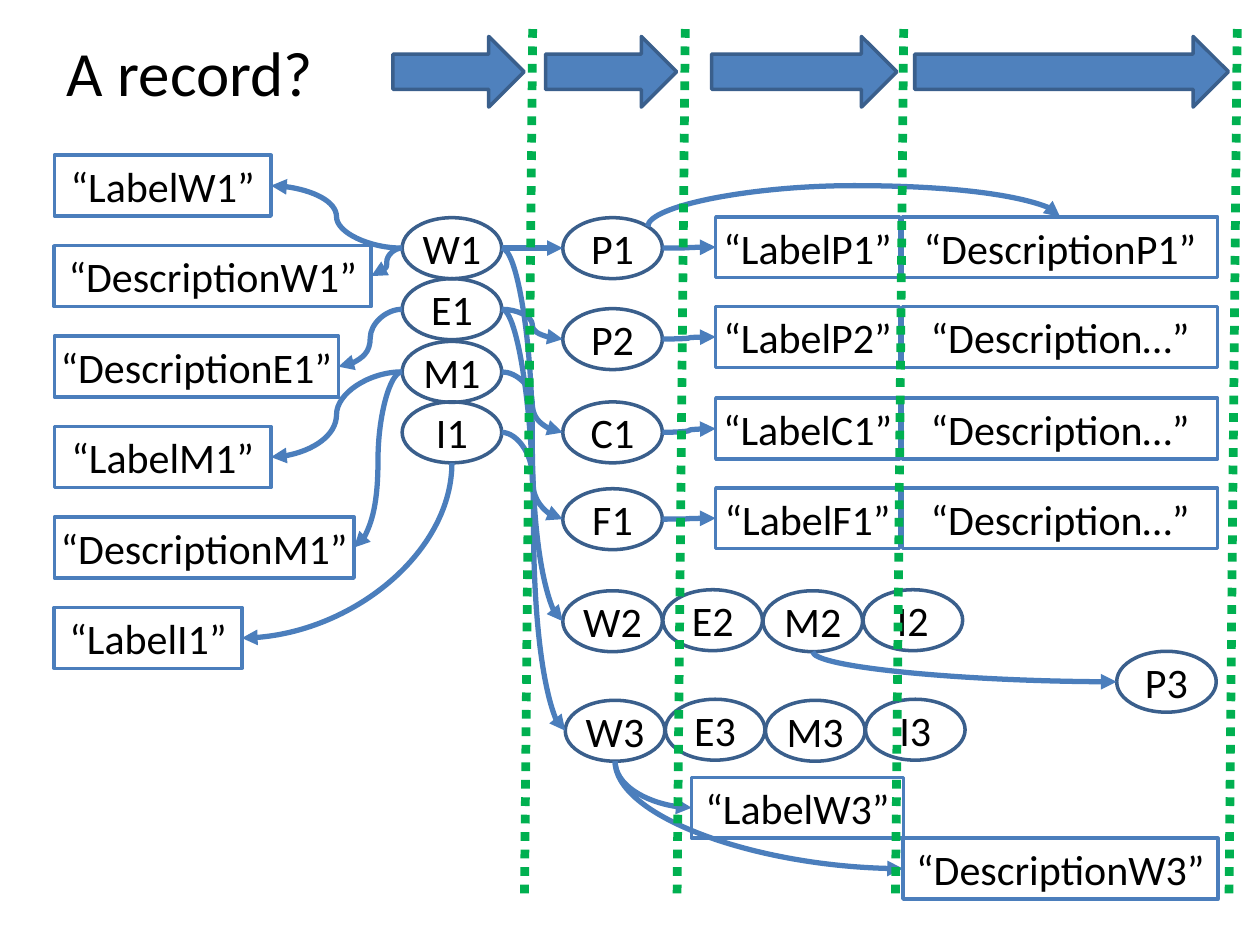
from typing import NamedTuple

from lxml import etree
from pptx import Presentation
from pptx.dml.color import RGBColor
from pptx.enum.dml import MSO_LINE
from pptx.enum.shapes import MSO_CONNECTOR, MSO_SHAPE
from pptx.enum.text import MSO_AUTO_SIZE, PP_ALIGN
from pptx.oxml.ns import qn
from pptx.util import Pt

OVAL, RECTANGLE, ARROW = MSO_SHAPE.OVAL, MSO_SHAPE.RECTANGLE, MSO_SHAPE.RIGHT_ARROW
STRAIGHT, CURVE = MSO_CONNECTOR.STRAIGHT, MSO_CONNECTOR.CURVE
FIT_SHAPE = MSO_AUTO_SIZE.SHAPE_TO_FIT_TEXT
DOTTED = MSO_LINE.ROUND_DOT
LEFT, CENTER = PP_ALIGN.LEFT, PP_ALIGN.CENTER

COLORS = {"text": "000000", "outline": "3A5F8C", "link": "4B7EBC",
          "arrow": "4F81BD", "divider": "00B050"}
FONT = "Calibri"
NODE_WIDTH, NODE_TEXT_WIDTH, HEIGHT = 56.9, 74.2, 34.8
CHAIN_PITCH = 57.2
INSET = 2.88

# Connection sites: (index, horizontal share, vertical share)
OVAL_SITES = {"left": (2, 0, 0.5), "bottom": (4, 0.5, 1),
              "right": (6, 1, 0.5), "top right": (7, 0.854, 0.146)}
BOX_SITES = {"top": (0, 0.5, 0), "left": (1, 0, 0.5), "right": (3, 1, 0.5)}


class Node(NamedTuple):
    name: str
    left: float
    top: float


class Box(NamedTuple):
    text: str
    left: float
    top: float
    width: float
    wrap: bool = True


class Link(NamedTuple):
    start: str
    start_side: str
    end: str
    end_side: str


class Stage(NamedTuple):
    arrow_left: float
    arrow_width: float
    divider: float


# Records: main entity, its properties, and the two chains
NODES = [Node(name, 229.8, top) for name, top in
         (("W1", 124.4), ("E1", 159.3), ("M1", 195.1), ("I1", 229.7))]
NODES += [Node(name, 321.6, top) for name, top in
          (("P1", 124.4), ("P2", 176.4), ("C1", 229.7), ("F1", 279.3))]
for number, left, top in ((2, 321.6, 337.6), (3, 323, 400.2)):
    NODES += [Node(f"{letter}{number}", left + i * CHAIN_PITCH, top - 0.6 * (i % 2))
              for i, letter in enumerate("WEMI")]
NODES.append(Node("P3", 638.1, 372.2))

LEFT_LABELS = (("LabelW1", 123.9, True), ("DescriptionW1", 181.2, True),
               ("DescriptionE1", 162.4, False), ("LabelM1", 123.9, True),
               ("DescriptionM1", 171.3, False), ("LabelI1", 107.2, True))
BOXES = [Box(text, 31, 88.7 + 51.7 * i, width, wrap)
         for i, (text, width, wrap) in enumerate(LEFT_LABELS)]
for name, description, top in (("P1", "DescriptionP1", 123.9), ("P2", "Description…", 175.2),
                               ("C1", "Description…", 227.6), ("F1", "Description…", 278.8)):
    BOXES += [Box(f"Label{name}", 409, top, 105),
              Box(description, 515.8, top, 180)]
BOXES += [Box("LabelW3", 395.2, 444.2, 121), Box("DescriptionW3", 516, 479, 180)]

LINKS = [Link(start, "right", end, "left") for start, end in
         (("W1", "P1"), ("E1", "P2"), ("M1", "C1"), ("I1", "F1"), ("W1", "W2"),
          ("E1", "W3"), ("P1", "LabelP1"), ("P2", "LabelP2"),
          ("C1", "LabelC1"), ("F1", "LabelF1"))]
LINKS += [Link(start, "left", end, "right") for start, end in
          (("W1", "LabelW1"), ("W1", "DescriptionW1"), ("E1", "DescriptionE1"),
           ("M1", "LabelM1"), ("M1", "DescriptionM1"))]
LINKS += [Link(start, "bottom", end, "left") for start, end in
          (("W3", "LabelW3"), ("W3", "DescriptionW3"), ("M2", "P3"))]
LINKS += [Link("I1", "bottom", "LabelI1", "right"),
          Link("P1", "top right", "DescriptionP1", "top")]

STAGES = [Stage(224.6, 74.9, 304.4), Stage(311.8, 74.9, 391.6),
          Stage(406.7, 105.8, 516.4), Stage(522.7, 179.3, 707)]


def color(name: str) -> RGBColor:
    return RGBColor.from_string(COLORS[name])


def write(shape, text: str, size: float, alignment, wrap: bool, insets) -> None:
    frame = shape.text_frame
    frame.text = text
    frame.word_wrap, frame.auto_size = wrap, FIT_SHAPE
    (frame.margin_left, frame.margin_top,
     frame.margin_right, frame.margin_bottom) = map(Pt, insets)
    paragraph = frame.paragraphs[0]
    paragraph.alignment = alignment
    font = paragraph.runs[0].font
    font.name, font.size, font.color.rgb = FONT, Pt(size), color("text")


def draw_shape(shapes, kind, left, top, width, height, line: str, fill: str = ""):
    shape = shapes.add_shape(kind, Pt(left), Pt(top), Pt(width), Pt(height))
    shape.shadow.inherit = False
    if fill:
        shape.fill.solid()
        shape.fill.fore_color.rgb = color(fill)
    else:
        shape.fill.background()
    shape.line.color.rgb, shape.line.width = color(line), Pt(2)
    return shape


def draw_node(slide, node: Node):
    group = slide.shapes.add_group_shape()
    text_left = node.left - (NODE_TEXT_WIDTH - NODE_WIDTH) / 2
    label = group.shapes.add_textbox(Pt(text_left), Pt(node.top),
                                     Pt(NODE_TEXT_WIDTH), Pt(HEIGHT))
    write(label, node.name, 24, CENTER, True, [INSET] * 4)
    return draw_shape(group.shapes, OVAL, node.left, node.top, NODE_WIDTH, HEIGHT, "outline")


def draw_box(slide, box: Box):
    shape = draw_shape(slide.shapes, RECTANGLE, box.left, box.top, box.width, HEIGHT, "link")
    write(shape, f"“{box.text}”", 24, CENTER, box.wrap, [INSET] * 4)
    return shape


def draw_line(slide, kind, start, end, line: str, width: float):
    connector = slide.shapes.add_connector(kind, *start, *end)
    connector.line.color.rgb, connector.line.width = color(line), Pt(width)
    etree.SubElement(connector.element.spPr, qn("a:effectLst"))
    return connector


def find_site(shape, side: str):
    sites = OVAL_SITES if shape.auto_shape_type == OVAL else BOX_SITES
    index, across, down = sites[side]
    return index, (int(shape.left + across * shape.width), int(shape.top + down * shape.height))


def turn_vertical(connector, start, end, arched: bool) -> None:
    """Make a curve leave its start vertically by rotating its frame."""
    across, down = end[0] - start[0], end[1] - start[1]
    width, height = abs(down), abs(across)
    connector.left = (start[0] + end[0] - width) // 2
    connector.top = (start[1] + end[1] - height) // 2
    connector.width, connector.height = width, height
    three_quarters = across > 0 and down > 0
    frame = connector.element.spPr.find(qn("a:xfrm"))
    frame.set("rot", str((270 if three_quarters else 90) * 60000))
    frame.set("flipH", str(int(three_quarters or down < 0)))
    frame.set("flipV", str(int(across > 0 and not three_quarters)))
    geometry = connector.element.spPr.find(qn("a:prstGeom"))
    if arched:
        guides = geometry.find(qn("a:avLst"))
        if guides is None:
            guides = etree.SubElement(geometry, qn("a:avLst"))
        etree.SubElement(guides, qn("a:gd"), name="adj1", fmla="val 419000")
    else:
        geometry.set("prst", "curvedConnector2")


def draw_link(slide, link: Link, targets: dict) -> None:
    start_shape, end_shape = targets[link.start], targets[link.end]
    start_index, start = find_site(start_shape, link.start_side)
    end_index, end = find_site(end_shape, link.end_side)
    connector = draw_line(slide, CURVE, start, end, "link", 3)
    outline = connector.element.spPr.find(qn("a:ln"))
    etree.SubElement(outline, qn("a:tailEnd"), type="triangle")
    if link.start_side not in ("left", "right"):
        turn_vertical(connector, start, end, link.end_side == "top")
    joints = connector.element.nvCxnSpPr.cNvCxnSpPr
    for tag, shape, index in (("a:stCxn", start_shape, start_index),
                              ("a:endCxn", end_shape, end_index)):
        etree.SubElement(joints, qn(tag), id=str(shape.shape_id), idx=str(index))


def draw_stage(slide, stage: Stage) -> None:
    divider = draw_line(slide, STRAIGHT, (Pt(stage.divider), Pt(16.6)),
                        (Pt(stage.divider - 4.7), Pt(514)), "divider", 5)
    divider.line.dash_style = DOTTED
    draw_shape(slide.shapes, ARROW, stage.arrow_left, 20.8, stage.arrow_width, 40.4,
               "outline", "arrow")


def main() -> None:
    presentation = Presentation()
    presentation.slide_width, presentation.slide_height = Pt(720), Pt(540)
    slide = presentation.slides.add_slide(presentation.slide_layouts[6])

    # Nodes and boxes, then the links that join them
    targets = {node.name: draw_node(slide, node) for node in NODES}
    targets.update({box.text: draw_box(slide, box) for box in BOXES})
    for link in LINKS:
        draw_link(slide, link, targets)

    # Title and stages
    title = slide.shapes.add_textbox(Pt(23), Pt(15.8), Pt(164), Pt(51))
    write(title, "A record?", 36, LEFT, False, (15.3, 3.6, 7.2, 3.6))
    for stage in STAGES:
        draw_stage(slide, stage)
    presentation.save("out.pptx")


if __name__ == "__main__":
    main()
